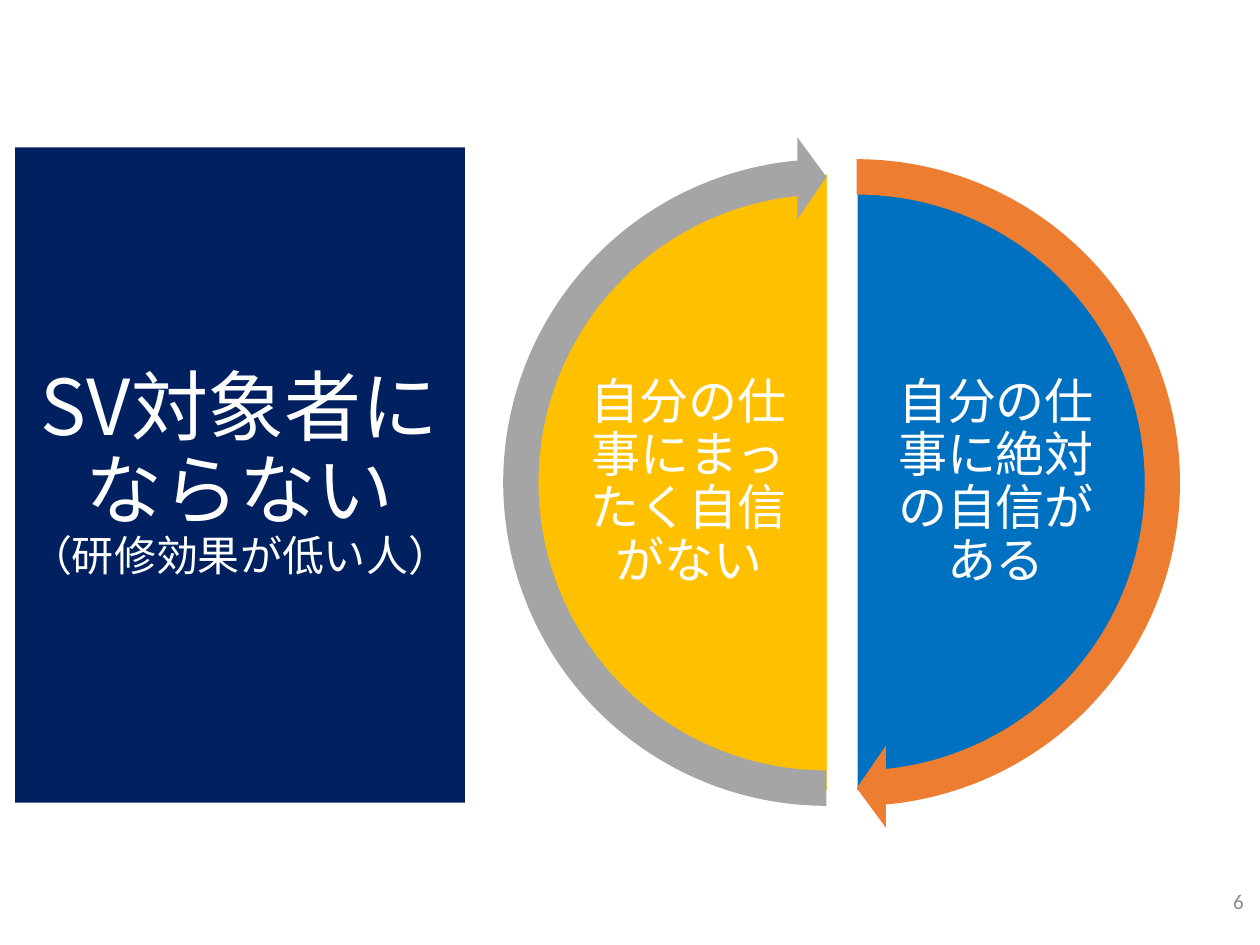
"""Build a slide with a title panel and two half circles ringed by arrows."""
import pptx
import pptx.util
import pptx.dml.color
import pptx.enum.shapes
import pptx.enum.text
import pptx.oxml.ns
import lxml.etree

Inches = pptx.util.Inches
Shape = pptx.enum.shapes.MSO_SHAPE
Align = pptx.enum.text.PP_ALIGN
COLORS = {
    "navy": "002060", "blue": "0070C0", "gold": "FFC000",
    "orange": "ED7D31", "gray": "A5A5A5", "white": "FFFFFF", "page": "8C8C8C",
}
SANS = "Noto Sans CJK JP"
UP, DOWN = 162, 54


def color(name):
    return pptx.dml.color.RGBColor.from_string(COLORS[name])


def paint(shape, name):
    shape.fill.solid()
    shape.fill.fore_color.rgb = color(name)


def add_run(para, text, size, tint="white", face=SANS):
    run = para.add_run()
    run.text = text
    font = run.font
    font.size = pptx.util.Pt(size)
    font.name = face
    font.color.rgb = color(tint)
    props = run._r.get_or_add_rPr()
    lxml.etree.SubElement(props, pptx.oxml.ns.qn("a:ea"), typeface=face)


def set_frame(shape, align, inset=None):
    frame = shape.text_frame
    frame.word_wrap = True
    frame.auto_size = pptx.enum.text.MSO_AUTO_SIZE.NONE
    frame.vertical_anchor = pptx.enum.text.MSO_ANCHOR.MIDDLE
    if inset is not None:
        frame.margin_left = frame.margin_right = Inches(inset)
        frame.margin_top = frame.margin_bottom = Inches(inset)
    para = frame.paragraphs[0]
    para.alignment = align
    return para


def add_title(slide):
    title = slide.shapes.title
    title.left, title.top = Inches(0.12), Inches(1.17)
    title.width, title.height = Inches(3.57), Inches(5.2)
    paint(title, "navy")
    para = set_frame(title, Align.CENTER)
    para.line_spacing = 0.9
    for text in ("SV対象者に", "ならない"):
        add_run(para, text, 44)
        para.add_line_break()
    add_run(para, "（研修効果が低い人）", 24)


def add_round(group, kind, left, top, size, tint, values):
    shape = group.shapes.add_shape(
        kind, Inches(left), Inches(top), Inches(size), Inches(size))
    shape.shadow.inherit = False
    paint(shape, tint)
    for i, value in enumerate(values):
        shape.adjustments[i] = value
    return shape


def add_half(group, left, tint, start, end, text, text_left):
    pie = add_round(group, Shape.PIE, left, 1.38, 4.9, tint, (start, end))
    pie.line.color.rgb = color("white")
    pie.line.width = pptx.util.Pt(1)
    box = group.shapes.add_textbox(
        Inches(text_left), Inches(2.67), Inches(1.75), Inches(2.33))
    para = set_frame(box, Align.CENTER, 0.04)
    para.line_spacing = 0.9
    add_run(para, text, 28)


def add_arrow(group, left, tint, start, end):
    values = (0.051, 3.275, end - 3.275, start, 0.059)
    arrow = add_round(group, Shape.CIRCULAR_ARROW, left, 1.08, 5.5, tint, values)
    arrow.line.fill.background()


def add_page(slide, text):
    box = slide.shapes.add_textbox(
        Inches(7.72), Inches(6.95), Inches(2.25), Inches(0.4))
    add_run(set_frame(box, Align.RIGHT), text, 12, "page", "Calibri")


def main():
    deck = pptx.Presentation()
    deck.slide_width, deck.slide_height = Inches(10), Inches(7.5)
    slide = deck.slides.add_slide(deck.slide_layouts[5])
    add_title(slide)
    group = slide.shapes.add_group_shape()
    add_half(group, 4.35, "blue", UP, DOWN, "自分の仕事に絶対の自信がある", 7.03)
    add_half(group, 4.12, "gold", DOWN, UP, "自分の仕事にまったく自信がない", 4.59)
    add_arrow(group, 4.05, "orange", UP, DOWN)
    add_arrow(group, 3.81, "gray", DOWN, UP)
    add_page(slide, "6")
    deck.save("out.pptx")


if __name__ == "__main__":
    main()
